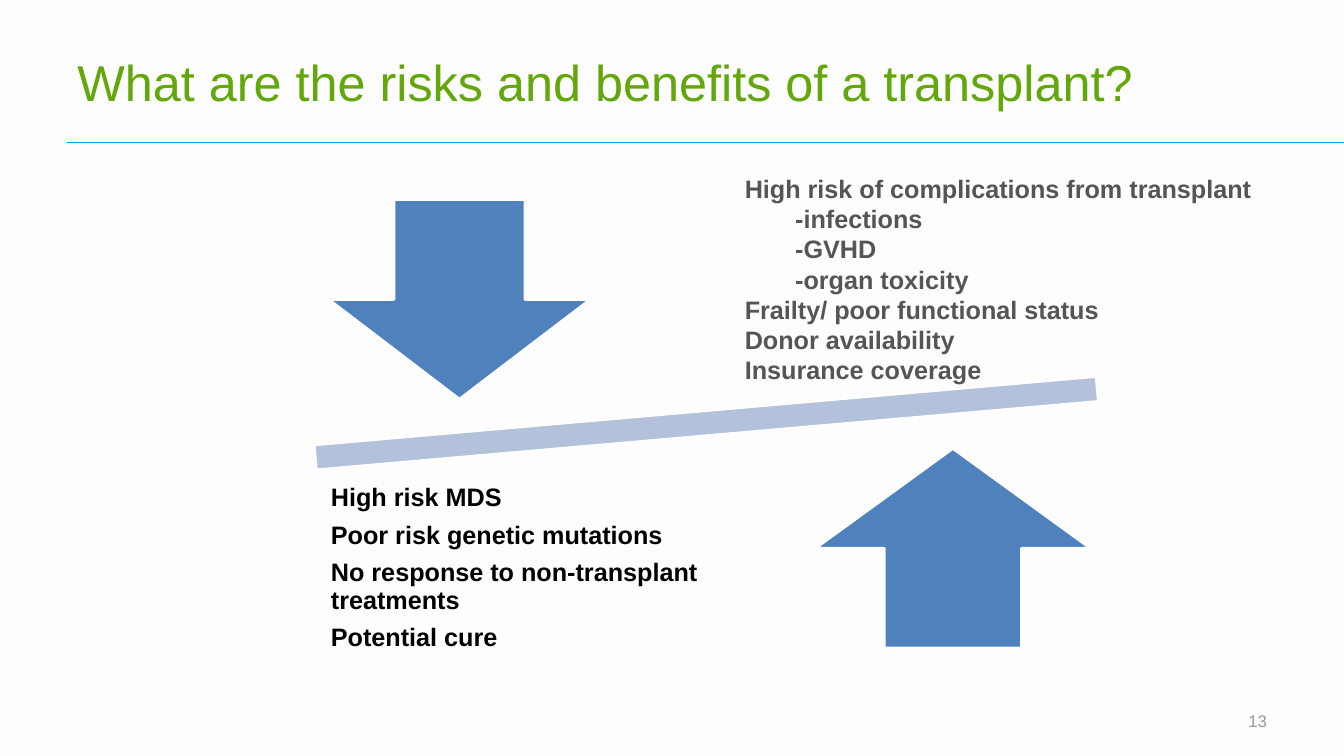
"""Build a slide weighing the risks and benefits of a transplant."""
from lxml.etree import SubElement
from pptx import Presentation
from pptx.dml.color import RGBColor
from pptx.enum.shapes import MSO_CONNECTOR, MSO_SHAPE
from pptx.enum.text import MSO_ANCHOR, PP_ALIGN
from pptx.oxml.ns import qn
from pptx.util import Cm, Pt

COLORS = {
    "background": "FDFDFD", "rule": "00A0DD", "title": "63A70A",
    "number": "99999A", "beam": "B3C1DB", "arrow": "4F81BD",
    "outline": "FFFFFF", "benefits": "000000", "risks": "555557",
}


def rgb(name):
    return RGBColor.from_string(COLORS[name])


def add_text(slide, box, lines, size, color, anchor, bold=False):
    tf = slide.shapes.add_textbox(*[Cm(v) for v in box]).text_frame
    tf.word_wrap = True
    tf.vertical_anchor = anchor
    tf.text = "\n".join(lines)
    for p in tf.paragraphs:
        for r in p.runs:
            r.font.name = "Arial"
            r.font.size = Pt(size)
            r.font.bold = bold
            r.font.color.rgb = rgb(color)
    return tf


prs = Presentation()
prs.slide_width, prs.slide_height = Cm(33.87), Cm(19.05)
s = prs.slides.add_slide(prs.slide_layouts[6])
s.background.fill.solid()
s.background.fill.fore_color.rgb = rgb("background")

rule = s.shapes.add_connector(MSO_CONNECTOR.STRAIGHT, Cm(1.7), Cm(3.6), Cm(33.87), Cm(3.6))
rule.line.color.rgb = rgb("rule")
rule.line.width = Pt(0.75)
SubElement(rule._element.spPr, qn("a:effectLst"))

add_text(s, (1.7, -0.23, 30.48, 3.18), ["What are the risks and benefits of a transplant?"],
         36, "title", MSO_ANCHOR.BOTTOM)
tf = add_text(s, (30.48, 17.65, 1.7, 1.02), ["13"], 12, "number", MSO_ANCHOR.MIDDLE)
tf.paragraphs[0].alignment = PP_ALIGN.RIGHT

balance = [
    (MSO_SHAPE.MATH_MINUS, (4.34, 9.32, 26.92, 2.69), "beam", 355),
    (MSO_SHAPE.DOWN_ARROW, (8.28, 5.03, 6.6, 5.03), "arrow", 0),
    (MSO_SHAPE.UP_ARROW, (20.55, 11.3, 6.93, 5.03), "arrow", 0),
]
for kind, box, color, angle in balance:
    sp = s.shapes.add_shape(kind, *[Cm(v) for v in box])
    sp.rotation = angle
    sp.shadow.inherit = False
    sp.fill.solid()
    sp.fill.fore_color.rgb = rgb(color)
    sp.line.color.rgb = rgb("outline")
    sp.line.width = Pt(2)

benefits = ["High risk MDS", "Poor risk genetic mutations",
            "No response to non-transplant treatments", "Potential cure"]
tf = add_text(s, (7.98, 11.38, 11.25, 5.89), benefits, 18, "benefits", MSO_ANCHOR.MIDDLE, True)
tf.margin_left = tf.margin_right = tf.margin_top = tf.margin_bottom = Cm(0.36)
for p in tf.paragraphs:
    p.line_spacing = 0.9
    p.space_after = Pt(7.5)

risks = ["High risk of complications from transplant", "-infections", "-GVHD",
         "-organ toxicity", "Frailty/ poor functional status", "Donor availability",
         "Insurance coverage"]
tf = add_text(s, (18.52, 4.24, 14.4, 5.64), risks, 18, "risks", MSO_ANCHOR.TOP, True)
for p in tf.paragraphs:
    if p.text.startswith("-"):
        p.level = 1
        pPr = p._p.get_or_add_pPr()
        pPr.set("marL", str(Cm(1.27)))
        pPr.set("indent", "0")

prs.save("out.pptx")
